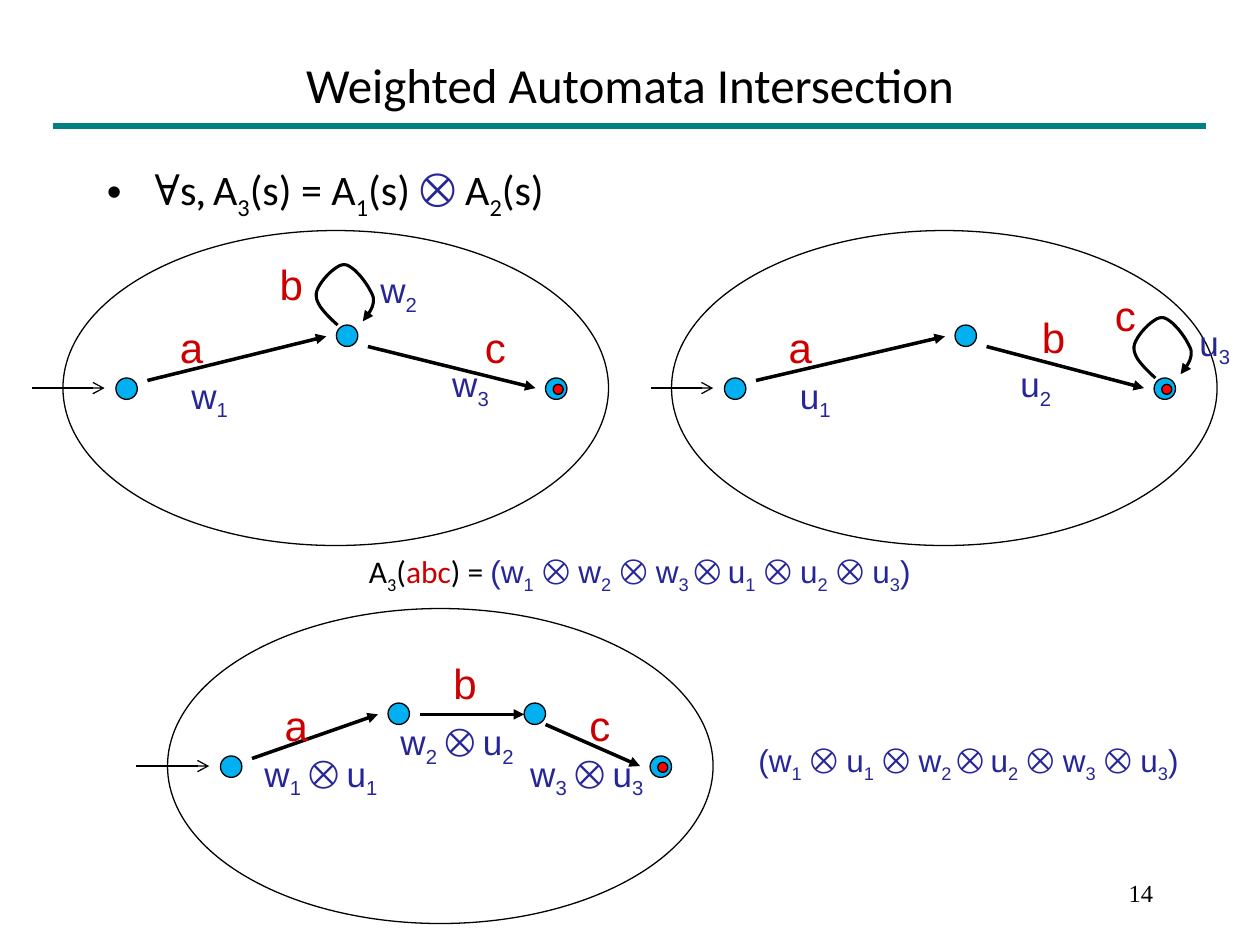
from itertools import groupby
from lxml import etree
from pptx import Presentation
from pptx import util as u
from pptx.dml.color import RGBColor
from pptx.enum import shapes, text
from pptx.oxml.ns import qn

BLACK = RGBColor(0, 0, 0)
TEAL = RGBColor(0, 0x80, 0x80)
SKY = RGBColor(0, 0xB0, 0xF0)
RED = RGBColor(0xFF, 0, 0)
CRIM = RGBColor(0xCC, 0, 0)
NAVY = RGBColor(0x26, 0x26, 0x99)

SIZE = (4.33, 2.5)
DOT = 0.17
UNITS = 1000
LOOP = [(0.01, 0), (-0.08, -0.08), (-0.17, -0.17), (-0.16, -0.25),
        (-0.15, -0.33), (-0.01, -0.48), (0.06, -0.48),
        (0.14, -0.48), (0.26, -0.31), (0.29, -0.23),
        (0.31, -0.16), (0.26, -0.09), (0.21, -0.03)]

AUTOS = [
    {"at": (0.5, 1.83), "mids": [2.17], "gap": 0.25, "entry": -0.25, "loop": (2.17, 0.75),
     "arcs": [("a", 0.83, 0.67), ("b", 1.62, 0.17), ("c", 3.25, 0.67)],
     "costs": [("w~1", 0.92, 1.09), ("w~2", 2.42, 0.25), ("w~3", 2.99, 1)]},
    {"at": (5.33, 1.83), "mids": [2.25], "gap": 0.25, "entry": -0.16, "loop": (3.83, 1.17),
     "arcs": [("a", 0.83, 0.67), ("b", 2.84, 0.59), ("c", 3.42, 0.42)],
     "costs": [("u~1", 0.92, 1.09), ("u~2", 2.67, 1), ("u~3", 4.09, 0.67)]},
    {"at": (1.33, 4.83), "mids": [1.75, 2.83], "gap": 0.17, "entry": -0.25, "loop": None,
     "arcs": [("a", 0.83, 0.67), ("b", 2.17, 0.34), ("c", 3.25, 0.67)],
     "costs": [("w~1~_⨂_u~1", 0.67, 1.09), ("w~2~_⨂_u~2", 1.75, 0.84),
               ("w~3~_⨂_u~3", 2.78, 1.09)]},
]
WIDTHS = {"a": 0.48, "b": 0.48, "c": 0.45, "w~": 0.51, "u~": 0.46}

RULE = [("∀s,_A~3~(s) = A~1~(s) ", BLACK), ("⨂", NAVY), (" A~2~(s)", BLACK)]
SUM = [("A~3~(", BLACK), ("abc", CRIM), (") = ", BLACK),
       ("(w~1~ ⨂ w~2~ ⨂ w~3 ~⨂_u~1~ ⨂ u~2~ ⨂ u~3~)", NAVY, "Arial")]
PROD = [("(w~1~ ⨂ u~1~ ⨂ w~2 ~⨂_u~2~ ⨂ w~3~ ⨂ u~3~)", NAVY)]

prs = Presentation()
prs.slide_width, prs.slide_height = u.Inches(10), u.Inches(7.5)
slide = prs.slides.add_slide(prs.slide_layouts[6])


def inch(*nums):
    return [u.Inches(n) for n in nums]


def write(parts, box, size, font="Arial", align=text.PP_ALIGN.LEFT,
          anchor=text.MSO_ANCHOR.TOP, wrap=True):
    frame = slide.shapes.add_textbox(*inch(*box)).text_frame
    frame.word_wrap = wrap
    frame.vertical_anchor = anchor
    para = frame.paragraphs[0]
    para.alignment = align
    for words, color, *face in parts:
        for i, piece in enumerate(words.split("~")):
            for sign, chars in groupby(piece, lambda ch: ch in "∀⨂,_"):
                run = para.add_run()
                run.text = "".join(chars).replace("_", " ")
                run.font.size = u.Pt(size)
                run.font.name = "Cambria" if sign else (face or [font])[0]
                run.font.color.rgb = color
                if i % 2:
                    run.font._element.set("baseline", "-25000")
    return para


def stroke(shape, color, width, head=None):
    shape.line.color.rgb = color
    shape.line.width = u.Pt(width)
    if head:
        etree.SubElement(shape.line._get_or_add_ln(), qn("a:tailEnd"), type=head)


def arrow(x1, y1, x2, y2, width=2, head="triangle", color=BLACK):
    line = slide.shapes.add_connector(shapes.MSO_CONNECTOR.STRAIGHT, *inch(x1, y1, x2, y2))
    stroke(line, color, width, head)
    etree.SubElement(line._element.spPr, qn("a:effectLst"))


def oval(x, y, w, h, fill=None):
    shape = slide.shapes.add_shape(shapes.MSO_SHAPE.OVAL, *inch(x, y, w, h))
    shape.shadow.inherit = False
    if fill is None:
        shape.fill.background()
    else:
        shape.fill.solid()
        shape.fill.fore_color.rgb = fill
    stroke(shape, BLACK, 0.75)


def curve(pts, steps=12):
    for k in range(0, len(pts) - 1, 3):
        for s in range(1, steps + 1):
            t = s / steps
            mix = ((1 - t) ** 3, 3 * t * (1 - t) ** 2, 3 * t * t * (1 - t), t ** 3)
            yield tuple(sum(m * p[d] for m, p in zip(mix, pts[k:k + 4])) for d in (0, 1))


def loop(x, y):
    pts = [((x + dx) * UNITS, (y + dy) * UNITS) for dx, dy in LOOP]
    path = slide.shapes.build_freeform(*pts[0], scale=u.Inches(1) / UNITS)
    path.add_line_segments(list(curve(pts)), close=False)
    shape = path.convert_to_shape()
    shape.shadow.inherit = False
    shape.fill.background()
    stroke(shape, BLACK, 1.75, "triangle")


def draw(auto):
    x, y = auto["at"]
    mids = auto["mids"]
    oval(x, y, *SIZE)
    for dx, dy in [(0.42, 1.17), (3.83, 1.17)] + [(m, 0.75) for m in mids]:
        oval(x + dx, y + dy, DOT, DOT, SKY)
    oval(x + 3.89, y + 1.22, 0.08, 0.08, RED)
    arrow(x + auto["entry"], y + 1.25, x + 0.33, y + 1.25, 0.75, "arrow")
    arrow(x + 0.67, y + 1.19, x + mids[0] - 0.08, y + 0.84)
    for one, two in zip(mids, mids[1:]):
        arrow(x + one + 0.25, y + 0.84, x + two, y + 0.84)
    arrow(x + mids[-1] + auto["gap"], y + 0.92, x + 3.75, y + 1.25)
    if auto["loop"]:
        loop(x + auto["loop"][0], y + auto["loop"][1])
    for key, color, size, high in (("arcs", CRIM, 24, 0.5), ("costs", NAVY, 20, 0.44)):
        for word, dx, dy in auto[key]:
            wide = 1.19 if "⨂" in word else WIDTHS[word[:2]]
            write([(word, color)], (x + dx, y + dy, wide, high), size, wrap=False)


arrow(0.42, 1, 9.57, 1, 4, None, TEAL)
write([("Weighted Automata Intersection", BLACK)], (0.75, 0.33, 8.5, 0.67), 28, "Calibri",
      text.PP_ALIGN.CENTER, text.MSO_ANCHOR.MIDDLE)
para = write(RULE, (0.75, 1.25, 8.5, 0.55), 24, "Calibri")
para.space_before = u.Pt(4.8)
props = para._p.get_or_add_pPr()
props.set("marL", str(u.Inches(0.38)))
props.set("indent", str(-u.Inches(0.38)))
etree.SubElement(props, qn("a:buFont"), typeface="Arial")
etree.SubElement(props, qn("a:buChar"), char="•")

for auto in AUTOS:
    draw(auto)

write(SUM, (2.83, 4.33, 5.08, 0.4), 18, "Calibri")
write(PROD, (5.92, 5.83, 3.75, 0.4), 18)
write([("14", BLACK)], (7.17, 6.92, 2.08, 0.42), 14, "Times New Roman", text.PP_ALIGN.RIGHT)
prs.save("out.pptx")
